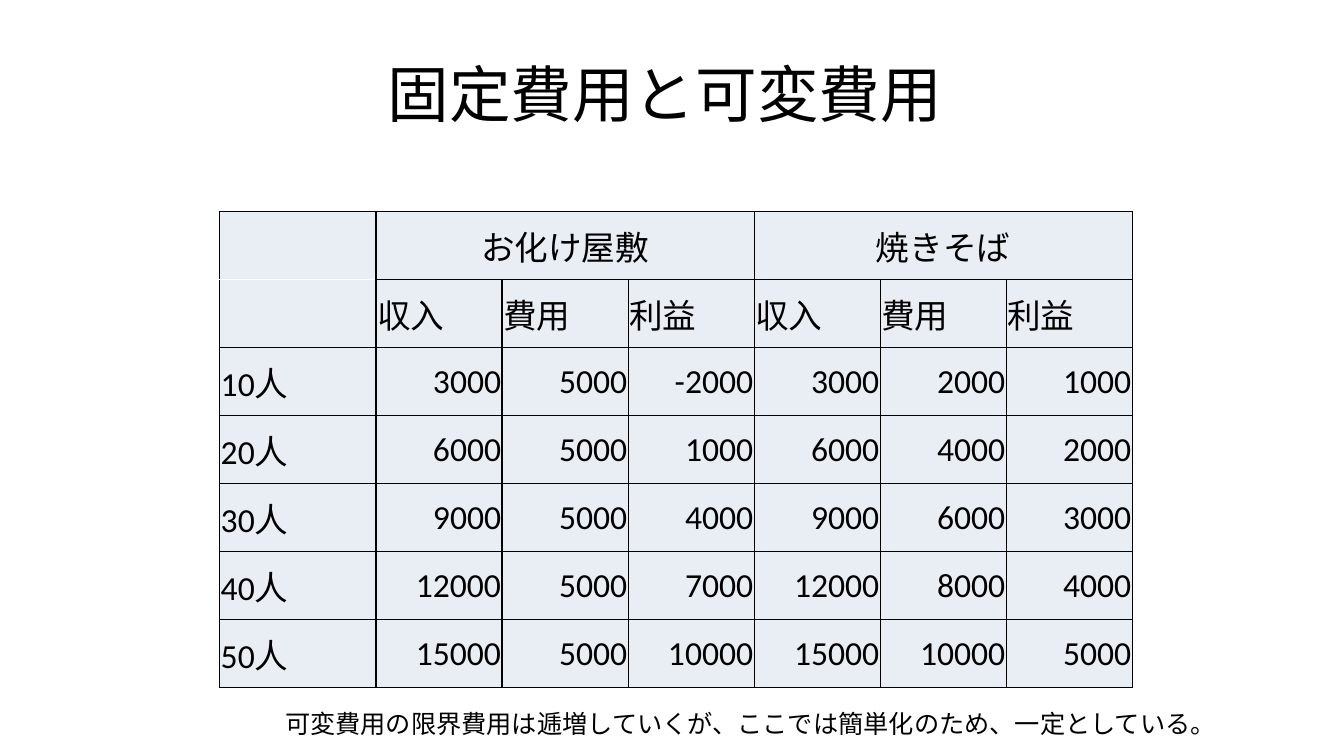
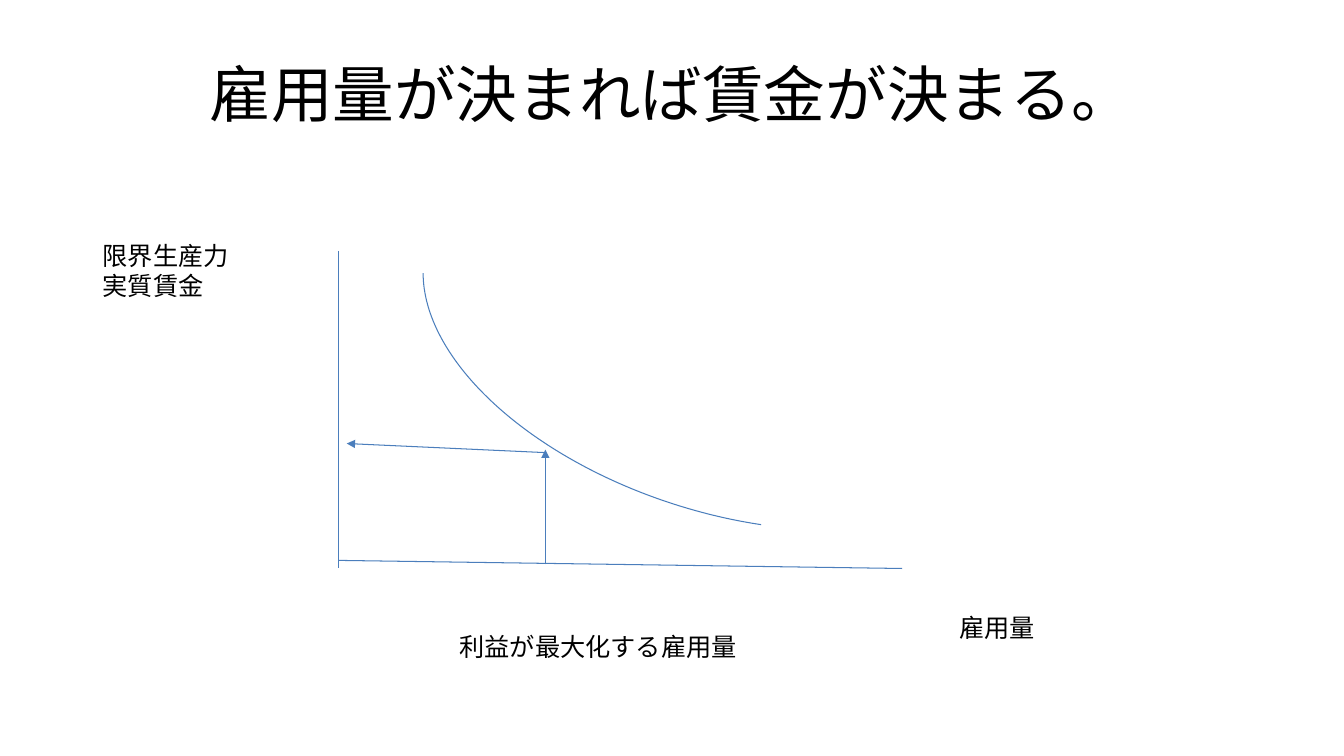
from dataclasses import dataclass

import lxml.etree
import pptx
import pptx.dml.color
import pptx.enum.shapes
import pptx.enum.text
import pptx.oxml.ns
import pptx.util

BLACK = pptx.dml.color.RGBColor(0x00, 0x00, 0x00)
WHITE = pptx.dml.color.RGBColor(0xFF, 0xFF, 0xFF)
CELL_FILL = pptx.dml.color.RGBColor(0xE9, 0xED, 0xF4)
CURVE_BLUE = pptx.dml.color.RGBColor(0x4B, 0x7E, 0xBC)

FONT = "Calibri"
WIDTH = pptx.util.Inches(13.33)
HEIGHT = pptx.util.Inches(7.5)
LINE_WIDTH = pptx.util.Pt(0.75)
CELL_INSET = pptx.util.Inches(0.01)
LABEL_HEIGHT = 5.33

ALIGN = pptx.enum.text.PP_ALIGN
ANCHOR = pptx.enum.text.MSO_ANCHOR

GROUPS = ("お化け屋敷", "焼きそば")
MEASURES = ("収入", "費用", "利益")
FIGURES = {
    "10人": (3000, 5000, -2000, 3000, 2000, 1000),
    "20人": (6000, 5000, 1000, 6000, 4000, 2000),
    "30人": (9000, 5000, 4000, 9000, 6000, 3000),
    "40人": (12000, 5000, 7000, 12000, 8000, 4000),
    "50人": (15000, 5000, 10000, 15000, 10000, 5000),
}


@dataclass(frozen=True)
class Area:
    left: float
    top: float
    width: float
    height: float

    def lengths(self) -> tuple[int, int, int, int]:
        return across(self.left), down(self.top), across(self.width), down(self.height)


@dataclass(frozen=True)
class Label:
    text: str
    area: Area


@dataclass(frozen=True)
class Segment:
    start: tuple[float, float]
    end: tuple[float, float]
    arrow: bool = False


TITLE_AREA = Area(5, 4, 90, 16.67)
TABLE_AREA = Area(16.35, 28, 67.91, 62.93)
HEAD_COLUMN = 11.63
CURVE_AREA = Area(41.18, 3.2, 25.88, 83.2)
CURVE_TURN = 287.8
CURVE_ANGLES = (91.147, 158.616)

COST_NOTE = Label(
    "可変費用の限界費用は逓増していくが、ここでは簡単化のため、一定としている。",
    Area(20.48, 93.07, 73.2, LABEL_HEIGHT),
)
GRAPH_LABELS = (
    Label("限界生産力\n実質賃金", Area(6.9, 31.07, 12.98, 9.47)),
    Label("雇用量", Area(70.65, 80.4, 16.5, LABEL_HEIGHT)),
    Label("利益が最大化する雇用量", Area(33.45, 82.8, 23.63, LABEL_HEIGHT)),
)
AXES_AND_ARROWS = (
    Segment((25.2, 33.2), (25.2, 75.2)),
    Segment((25.2, 74.13), (67.13, 75.2)),
    Segment((40.58, 74.67), (40.58, 59.47), arrow=True),
    Segment((40.58, 59.87), (25.8, 58.67), arrow=True),
)


def across(percent: float) -> int:
    return round(WIDTH * percent / 100)


def down(percent: float) -> int:
    return round(HEIGHT * percent / 100)


def write_text(frame, text: str, *, size: float = 18, align=ALIGN.LEFT) -> None:
    for index, line in enumerate(text.split("\n")):
        paragraph = frame.add_paragraph() if index else frame.paragraphs[0]
        paragraph.alignment = align
        span = paragraph.add_run()
        span.text = line
        span.font.name = FONT
        span.font.size = pptx.util.Pt(size)
        span.font.color.rgb = BLACK


def add_text(page, label: Label, *, size: float = 18, align=ALIGN.LEFT, anchor=ANCHOR.TOP) -> None:
    frame = page.shapes.add_textbox(*label.area.lengths()).text_frame
    frame.word_wrap = True
    frame.vertical_anchor = anchor
    write_text(frame, label.text, size=size, align=align)


def add_page(deck, title: str):
    page = deck.slides.add_slide(deck.slide_layouts[6])
    add_text(page, Label(title, TITLE_AREA), size=44, align=ALIGN.CENTER, anchor=ANCHOR.MIDDLE)
    return page


def add_child(parent, tag: str, **attributes: str):
    return lxml.etree.SubElement(parent, pptx.oxml.ns.qn(tag), **attributes)


def format_cell(cell, white_edge: str) -> None:
    properties = cell._tc.get_or_add_tcPr()
    for edge in ("lnL", "lnR", "lnT", "lnB"):
        border = add_child(properties, f"a:{edge}", w=str(pptx.util.Pt(1)))
        color = WHITE if edge == white_edge else BLACK
        add_child(add_child(border, "a:solidFill"), "a:srgbClr", val=str(color))
    cell.fill.solid()
    cell.fill.fore_color.rgb = CELL_FILL
    cell.vertical_anchor = ANCHOR.MIDDLE
    cell.margin_left = cell.margin_right = cell.margin_top = CELL_INSET
    cell.margin_bottom = 0


def add_cost_table(page) -> None:
    group_row = [""]
    for group in GROUPS:
        group_row += [group] + [""] * (len(MEASURES) - 1)
    rows = [group_row, ["", *MEASURES * len(GROUPS)]]
    rows += [[people, *map(str, values)] for people, values in FIGURES.items()]
    columns = len(group_row)
    table = page.shapes.add_table(len(rows), columns, *TABLE_AREA.lengths()).table
    table.first_row = table.horz_banding = False
    data_column = (TABLE_AREA.width - HEAD_COLUMN) / (columns - 1)
    for index, column in enumerate(table.columns):
        column.width = across(data_column if index else HEAD_COLUMN)
    for row, texts in enumerate(rows):
        for column, text in enumerate(texts):
            cell = table.cell(row, column)
            white_edge = {(0, 0): "lnB", (1, 0): "lnT"}.get((row, column), "")
            format_cell(cell, white_edge)
            if text:
                align = ALIGN.LEFT
                if row == 0:
                    align = ALIGN.CENTER
                elif row > 1 and column > 0:
                    align = ALIGN.RIGHT
                write_text(cell.text_frame, text, size=24, align=align)
    for first in range(1, columns, len(MEASURES)):
        table.cell(0, first).merge(table.cell(0, first + len(MEASURES) - 1))


def add_segment(page, segment: Segment) -> None:
    line = page.shapes.add_connector(
        pptx.enum.shapes.MSO_CONNECTOR.STRAIGHT,
        across(segment.start[0]), down(segment.start[1]),
        across(segment.end[0]), down(segment.end[1]),
    )
    line.line.color.rgb = CURVE_BLUE
    line.line.width = LINE_WIDTH
    if segment.arrow:
        add_child(line.line._get_or_add_ln(), "a:tailEnd", type="triangle")
    add_child(line._element.spPr, "a:effectLst")


def add_curve(page) -> None:
    curve = page.shapes.add_shape(pptx.enum.shapes.MSO_SHAPE.ARC, *CURVE_AREA.lengths())
    curve.rotation = CURVE_TURN
    for index, angle in enumerate(CURVE_ANGLES):
        curve.adjustments[index] = angle
    curve.shadow.inherit = False
    curve.fill.background()
    curve.line.color.rgb = CURVE_BLUE
    curve.line.width = LINE_WIDTH


def main() -> None:
    deck = pptx.Presentation()
    deck.slide_width = WIDTH
    deck.slide_height = HEIGHT

    cost_page = add_page(deck, "固定費用と可変費用 ")
    add_cost_table(cost_page)
    add_text(cost_page, COST_NOTE)

    wage_page = add_page(deck, "雇用量が決まれば賃金が決まる。")
    add_curve(wage_page)
    for segment in AXES_AND_ARROWS:
        add_segment(wage_page, segment)
    for label in GRAPH_LABELS:
        add_text(wage_page, label)

    deck.save("out.pptx")


if __name__ == "__main__":
    main()
